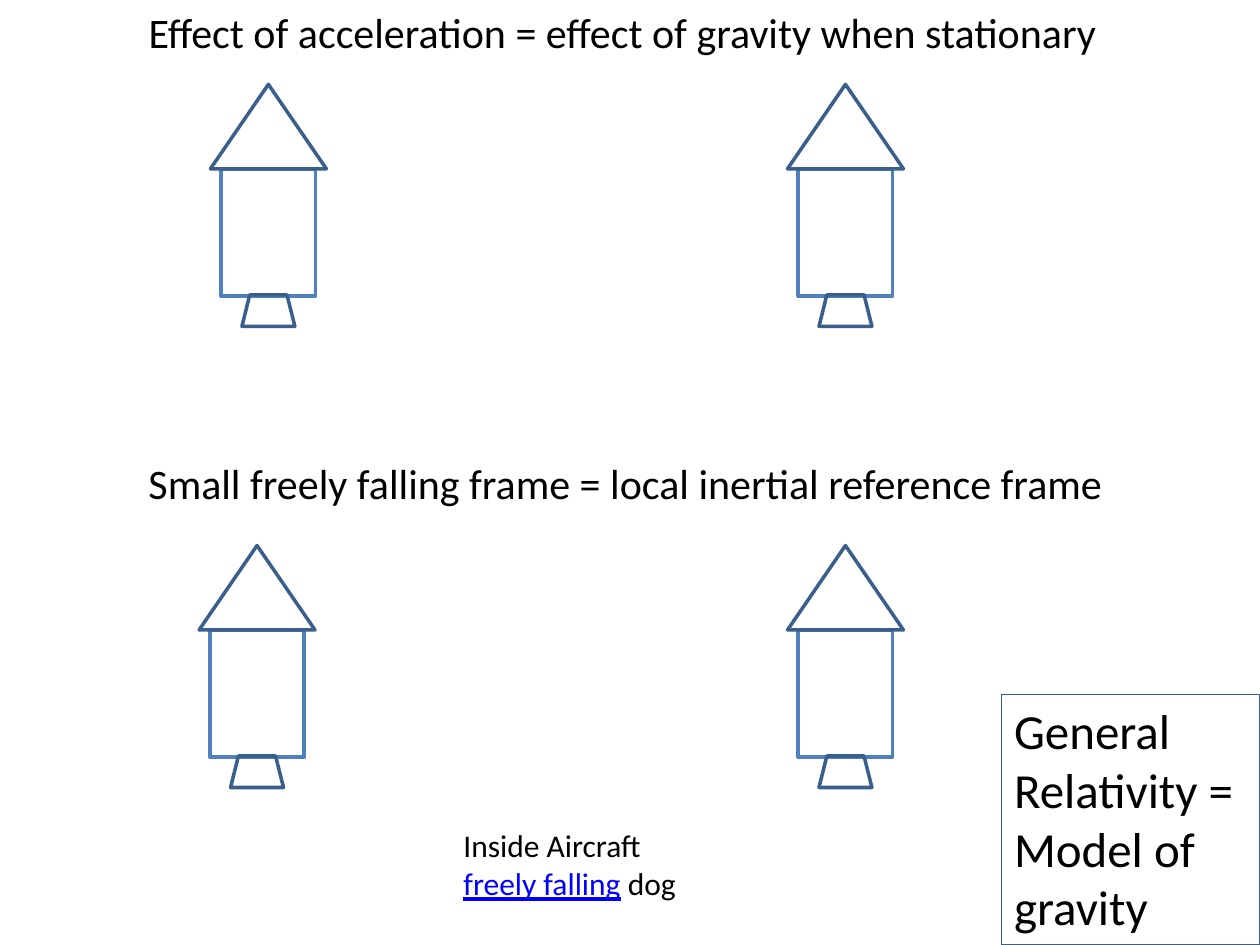
from pptx import Presentation
from pptx.dml.color import RGBColor
from pptx.enum.shapes import MSO_SHAPE as SHAPE
from pptx.enum.text import MSO_ANCHOR as ANCHOR, MSO_AUTO_SIZE as AUTO, PP_ALIGN as ALIGN
from pptx.util import Inches, Pt

FONT = "Calibri"
BLACK, LINK = "000000", "0000FF"
BODY_LINE, DARK_LINE = "4F81BD", "3A5F8C"


def rgb(value):
    return RGBColor.from_string(value)


def write(sp, lines, size=24, color=BLACK):
    """Each line is a list of (text, run colour or None, underlined) runs, or a string."""
    tf = sp.text_frame
    tf.word_wrap = False
    tf.auto_size = AUTO.SHAPE_TO_FIT_TEXT
    tf.vertical_anchor = ANCHOR.TOP
    for i, line in enumerate(lines):
        p = tf.add_paragraph() if i else tf.paragraphs[0]
        p.alignment = ALIGN.LEFT
        runs = [(line, None, False)] if isinstance(line, str) else line
        for text, run_color, underline in runs:
            r = p.add_run()
            r.text = text
            r.font.name = FONT
            r.font.size = Pt(size)
            r.font.color.rgb = rgb(run_color or color)
            r.font.underline = underline


def place(sp, x, y, w, h):
    sp.left, sp.top, sp.width, sp.height = (Inches(v) for v in (x, y, w, h))


def add_outline(slide, kind, x, y, w, h, line, width):
    sp = slide.shapes.add_shape(kind, Inches(x), Inches(y), Inches(w), Inches(h))
    sp.shadow.inherit = False
    sp.fill.background()
    sp.line.color.rgb = rgb(line)
    sp.line.width = Pt(width)
    return sp


def add_text(slide, x, y, w, h, lines, **fmt):
    sp = slide.shapes.add_textbox(Inches(x), Inches(y), Inches(w), Inches(h))
    write(sp, lines, **fmt)


def add_title(slide, x, y, w, h, text):
    sp = slide.shapes.title
    place(sp, x, y, w, h)
    write(sp, [text])


def add_rocket(slide, x, y, w=0.92):
    """Body, nose cone and nozzle stacked on one centre line."""
    cx = x + w / 2
    parts = [
        (SHAPE.RECTANGLE, 0.75, 0.67, 1.01, BODY_LINE),
        (SHAPE.ISOSCELES_TRIANGLE, w, 0, 0.67, DARK_LINE),
        (SHAPE.TRAPEZOID, 0.42, 1.67, 0.25, DARK_LINE),
    ]
    for kind, part_w, dy, part_h, line in parts:
        add_outline(slide, kind, cx - part_w / 2, y + dy, part_w, part_h, line, 2)


def add_summary(slide, x, y, w, h):
    sp = add_outline(slide, SHAPE.RECTANGLE, x, y, w, h, DARK_LINE, 0.75)
    write(sp, ["General", "Relativity =", "Model of", "gravity"], size=28)


def main():
    prs = Presentation()
    prs.slide_width, prs.slide_height = Inches(10), Inches(7.5)
    slide = prs.slides.add_slide(prs.slide_layouts[5])

    # Headings
    add_title(slide, 1.08, 0, 7.81, 0.5,
              "Effect of acceleration = effect of gravity when stationary")
    add_text(slide, 1.08, 3.58, 7.85, 0.5,
             ["Small freely falling frame = local inertial reference frame"])

    # Pairs of rockets under each heading
    for x, y in [(1.67, 0.67), (6.25, 0.67), (1.58, 4.33), (6.25, 4.33)]:
        add_rocket(slide, x, y)

    # Conclusion and example
    add_summary(slide, 7.95, 5.51, 2.05, 1.99)
    add_text(slide, 3.58, 6.51, 1.91, 0.71,
             ["Inside Aircraft", [("freely falling", LINK, True), (" dog", None, False)]],
             size=18)

    prs.save("out.pptx")


if __name__ == "__main__":
    main()
